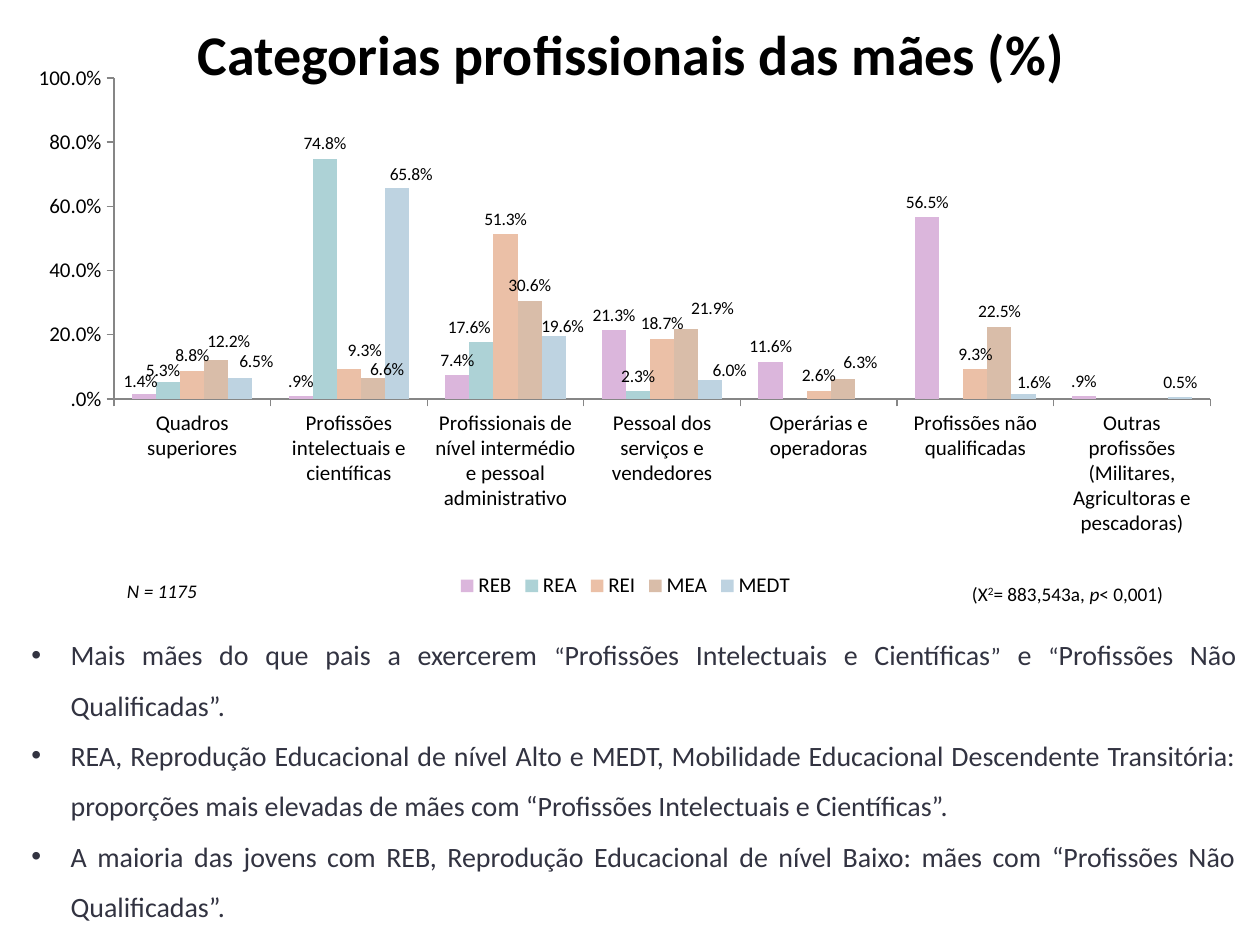
from lxml.etree import SubElement
from pptx import Presentation
from pptx.chart.data import CategoryChartData
from pptx.dml.color import RGBColor
from pptx.enum.chart import XL_CHART_TYPE, XL_LABEL_POSITION, XL_LEGEND_POSITION, XL_TICK_MARK
from pptx.enum.text import MSO_ANCHOR, PP_ALIGN
from pptx.oxml import parse_xml
from pptx.oxml.ns import nsdecls, qn
from pptx.util import Pt

COLORS = {
    "text": "000000", "bullet": "323341", "axis": "868686",
    "REB": "DBB6DC", "REA": "ADD2D6", "REI": "EBC0A7", "MEA": "D9BDA9", "MEDT": "BED3E1",
}
FONT = "Calibri"
CHART_BOX = (8.6, 37.4, 697.7, 307.4)
PLOT_AREA = {"x": 0.081, "y": 0.023, "w": 0.898, "h": 0.597}
CATEGORIES = [
    "Quadros superiores",
    "Profissões intelectuais e científicas",
    "Profissionais de nível intermédio e pessoal administrativo",
    "Pessoal dos serviços e vendedores",
    "Operárias e operadoras",
    "Profissões não qualificadas",
    "Outras profissões (Militares, Agricultoras e pescadoras)",
]
SERIES = {
    "REB": [0.014, 0.009, 0.074, 0.213, 0.116, 0.565, 0.009],
    "REA": [0.053, 0.748, 0.176, 0.023, None, None, None],
    "REI": [0.088, 0.093, 0.513, 0.187, 0.026, 0.093, None],
    "MEA": [0.122, 0.066, 0.306, 0.219, 0.063, 0.225, None],
    "MEDT": [0.065, 0.658, 0.196, 0.06, None, 0.016, 0.005],
}
LABEL_SHIFTS = {
    "REB": {0: (-2, 1)},
    "REA": {0: (-3, 2), 2: (-7, 0)},
    "REI": {1: (9, -2)},
    "MEA": {0: (7, -2), 1: (8, 4), 3: (15, -3), 4: (10, -1)},
    "MEDT": {0: (9, -1), 1: (8, 1), 2: (5, 3), 3: (11, 3), 5: (6, 2)},
}
BULLETS = [
    [("Mais mães do que pais a exercerem ", {}), ("“", {"size": Pt(14)}),
     ("Profissões Intelectuais e Científicas", {}), ("”", {"size": Pt(14)}),
     (" e ", {}), ("“", {"size": Pt(14)}), ("Profissões Não Qualificadas”. ", {})],
    [("REA, Reprodução Educacional de nível Alto e MEDT, Mobilidade Educacional Descendente "
      "Transitória: proporções mais elevadas de mães com “Profissões Intelectuais e "
      "Científicas”. ", {})],
    [("A maioria das jovens com REB, Reprodução Educacional de nível Baixo: mães com "
      "“Profissões Não Qualificadas”.", {})],
]


def set_all(target, values):
    for name, value in values.items():
        setattr(target, name, value)


def rgb(name):
    return RGBColor.from_string(COLORS[name])


def add_text(page, bounds, paragraphs, size, color="text", para_format=None, bold=False,
             anchor=MSO_ANCHOR.TOP):
    box = page.shapes.add_textbox(*map(Pt, bounds))
    frame = box.text_frame
    set_all(frame, {"word_wrap": True, "vertical_anchor": anchor})
    for index, spans in enumerate(paragraphs):
        para = frame.add_paragraph() if index else frame.paragraphs[0]
        set_all(para, para_format or {})
        for text, changes in spans:
            span = para.add_run()
            span.text = text
            span.font.color.rgb = rgb(color)
            set_all(span.font, {"name": FONT, "size": Pt(size), "bold": bold, **changes})
    return frame


def add_bullet(para):
    properties = para._p.get_or_add_pPr()
    properties.set("marL", str(Pt(22.5)))
    properties.set("indent", str(Pt(-22.5)))
    SubElement(properties, qn("a:buFont"), typeface="Arial")
    SubElement(properties, qn("a:buChar"), char="•")


def manual_layout(values, inner=False):
    modes = {"layoutTarget": "inner", "xMode": "edge", "yMode": "edge"} if inner else {}
    parts = "".join(f'<c:{name} val="{value}"/>' for name, value in {**modes, **values}.items())
    return parse_xml(f'<c:layout {nsdecls("c")}><c:manualLayout>{parts}'
                     '</c:manualLayout></c:layout>')


def format_axis(axis):
    set_all(axis, {"has_major_gridlines": False, "has_title": False,
                   "major_tick_mark": XL_TICK_MARK.OUTSIDE,
                   "minor_tick_mark": XL_TICK_MARK.NONE})
    axis.tick_labels.font.size = Pt(12)
    axis.format.line.color.rgb = rgb("axis")
    axis.format.line.width = Pt(0.75)


def shift_label(series, index, shift, number_format):
    label = series.points[index].data_label
    label.font.size = Pt(10)
    label.position = XL_LABEL_POSITION.OUTSIDE_END
    layout = manual_layout({"x": round(shift[0] / CHART_BOX[2], 4),
                            "y": round(shift[1] / CHART_BOX[3], 4)})
    label._dLbl.find(qn("c:idx")).addnext(layout)
    layout.addnext(parse_xml(f'<c:numFmt {nsdecls("c")} formatCode="{number_format}" '
                             'sourceLinked="0"/>'))


def format_series(series):
    fill = series.format.fill
    fill.solid()
    fill.fore_color.rgb = rgb(series.name)
    series.invert_if_negative = False
    number_format = "####.0%" if series.name == "REB" else "###0.0%"
    set_all(series.data_labels, {"show_value": True, "number_format": number_format,
                                 "number_format_is_linked": False,
                                 "position": XL_LABEL_POSITION.OUTSIDE_END})
    series.data_labels.font.size = Pt(10)
    for index, shift in LABEL_SHIFTS[series.name].items():
        shift_label(series, index, shift, number_format)


def add_profession_chart(page):
    data = CategoryChartData()
    data.categories = CATEGORIES
    for name, values in SERIES.items():
        data.add_series(name, values)
    chart = page.shapes.add_chart(XL_CHART_TYPE.COLUMN_CLUSTERED, *map(Pt, CHART_BOX), data).chart
    set_all(chart, {"has_title": False, "has_legend": True})
    set_all(chart.font, {"name": FONT, "size": Pt(10)})
    chart.font.color.rgb = rgb("text")
    set_all(chart.legend, {"position": XL_LEGEND_POSITION.BOTTOM, "include_in_layout": False})
    chart.legend.font.size = Pt(12)
    format_axis(chart.category_axis)
    format_axis(chart.value_axis)
    set_all(chart.value_axis, {"minimum_scale": 0, "maximum_scale": 1, "major_unit": 0.2})
    set_all(chart.value_axis.tick_labels, {"number_format": "####.0%",
                                           "number_format_is_linked": False})
    plot = chart.plots[0]
    set_all(plot, {"gap_width": 150, "overlap": 0, "vary_by_categories": False})
    for series in plot.series:
        format_series(series)
    area = chart._chartSpace.chart.plotArea
    for layout in area.findall(qn("c:layout")):
        area.remove(layout)
    area.insert(0, manual_layout(PLOT_AREA, inner=True))


def main():
    deck = Presentation()
    set_all(deck, {"slide_width": Pt(720), "slide_height": Pt(540)})
    page = deck.slides.add_slide(deck.slide_layouts[6])
    add_text(page, (36.7, 0.7, 648, 59), [[("Categorias profissionais das mães (%)", {})]], 32,
             para_format={"alignment": PP_ALIGN.CENTER}, bold=True, anchor=MSO_ANCHOR.MIDDLE)
    add_profession_chart(page)
    add_text(page, (65.5, 327.6, 88.6, 20.9), [[("N = 1175", {"italic": True})]], 11)
    test = add_text(page, (513.4, 329, 158.4, 20.9),
                    [[("(X", {}), ("2", {}), ("= 883,543a, ", {}), ("p", {"italic": True}),
                      ("< 0,001)", {})]], 11, para_format={"alignment": PP_ALIGN.RIGHT})
    test.paragraphs[0].runs[1].font._rPr.set("baseline", "30000")
    bullets = add_text(page, (10.8, 351.4, 702.7, 181.4), BULLETS, 16, "bullet",
                       {"alignment": PP_ALIGN.JUSTIFY, "line_spacing": 1.5})
    for para in bullets.paragraphs:
        add_bullet(para)
    deck.save("out.pptx")


if __name__ == "__main__":
    main()
